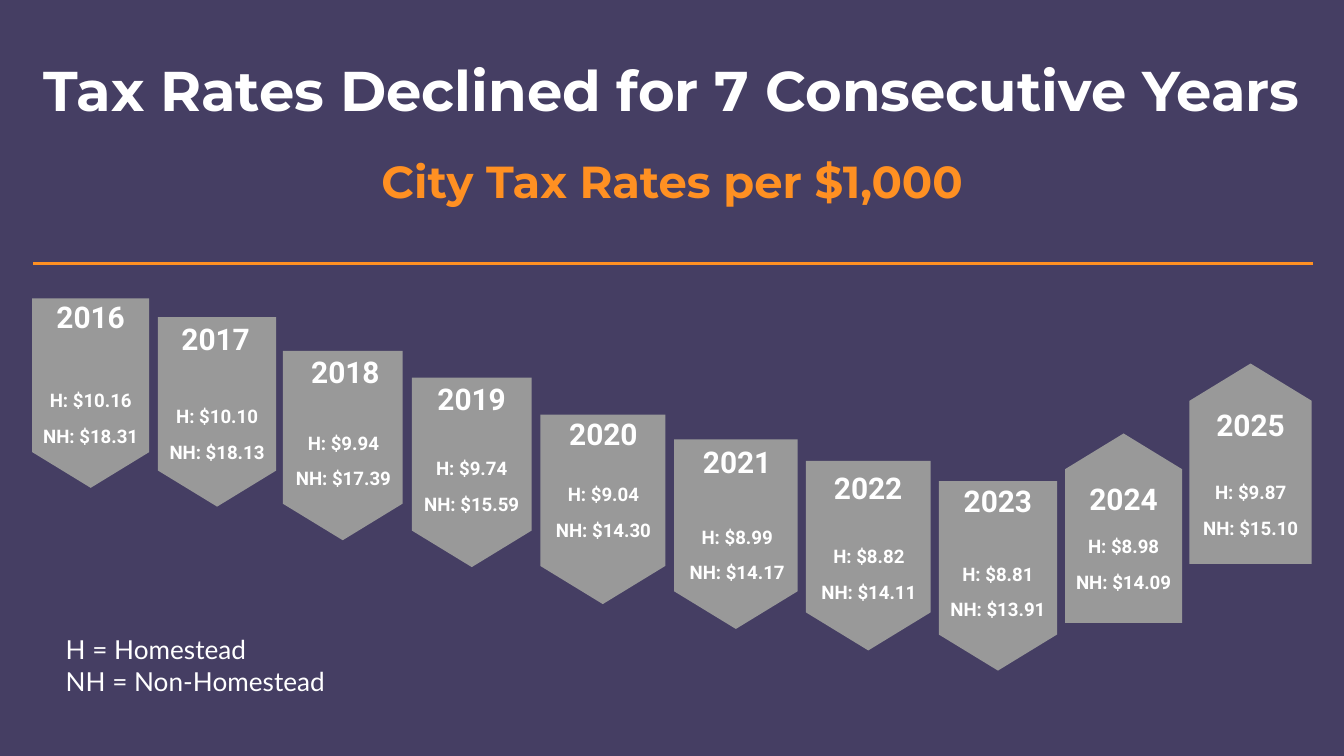
"""Build a slide of city tax rates by year."""
from dataclasses import dataclass

from lxml import etree
from pptx import Presentation
from pptx.dml.color import RGBColor
from pptx.enum.shapes import MSO_CONNECTOR, MSO_SHAPE
from pptx.enum.text import MSO_ANCHOR, MSO_AUTO_SIZE, PP_ALIGN
from pptx.oxml.ns import qn
from pptx.util import Emu, Pt

PLATE = MSO_SHAPE.PENTAGON
STRAIGHT = MSO_CONNECTOR.STRAIGHT
TOP, MIDDLE, BOTTOM = MSO_ANCHOR.TOP, MSO_ANCHOR.MIDDLE, MSO_ANCHOR.BOTTOM
LEFT, CENTER = PP_ALIGN.LEFT, PP_ALIGN.CENTER
FIXED = MSO_AUTO_SIZE.NONE
SCALE = 4572
DOWN, UP = 90, 270
TITLE_ONLY = 5


@dataclass(frozen=True)
class Theme:
    back: str = "453E63"
    plate: str = "999999"
    accent: str = "FF9022"
    ink: str = "FFFFFF"
    head: str = "Montserrat"
    body: str = "Lato"
    label: str = "Roboto"
    title_size: int = 30
    sub_size: int = 24
    year_size: int = 16
    key_size: int = 14
    rate_size: int = 10


THEME = Theme()

# year, rates, plate box, turn, year (left, top, width), rates (left, top, width)
BADGES = [
    ("2016", "10.16", "18.31", (-6, 498, 282, 174), DOWN, (39, 438, 192), (45, 571, 180)),
    ("2017", "10.10", "18.13", (182, 525, 282, 176), DOWN, (234, 471, 174), (233, 595, 180)),
    ("2018", "9.94", "17.39", (369, 574, 282, 178), DOWN, (418, 520, 192), (421, 634, 180)),
    ("2019", "9.74", "15.59", (561, 614, 282, 178), DOWN, (612, 560, 180), (612, 672, 180)),
    ("2020", "9.04", "14.30", (756, 665, 282, 186), DOWN, (802, 613, 192), (808, 711, 180)),
    ("2021", "8.99", "14.17", (954, 703, 282, 184), DOWN, (1004, 654, 186), (1004, 774, 186)),
    ("2022", "8.82", "14.11", (1151, 734, 282, 186), DOWN, (1196, 693, 192), (1203, 803, 180)),
    ("2023", "8.81", "13.91", (1344, 769, 282, 176), DOWN, (1398, 712, 174), (1398, 829, 174)),
    ("2024", "8.98", "14.09", (1531, 699, 282, 174), UP, (1585, 709, 174), (1585, 788, 174)),
    ("2025", "9.87", "15.10", (1712, 599, 298, 182), UP, (1774, 599, 174), (1770, 708, 182)),
]


def px(*values):
    return [Emu(value * SCALE) for value in values]


def color(code):
    return RGBColor.from_string(code)


def write(para, text, font, size, ink=THEME.ink, bold=True, align=CENTER,
          space=1.0, before=0, after=0):
    """Put one formatted run of text in a paragraph."""
    para.alignment = align
    para.line_spacing = space
    para.space_before, para.space_after = Pt(before), Pt(after)
    run = para.add_run()
    run.text = text
    run.font.name, run.font.size, run.font.bold = font, Pt(size), bold
    run.font.color.rgb = color(ink)


class Sheet:
    """Hold the theme and the current slide."""

    def __init__(self, deck, theme):
        self.theme = theme
        self.slide = deck.slides.add_slide(deck.slide_layouts[TITLE_ONLY])
        fill = self.slide.background.fill
        fill.solid()
        fill.fore_color.rgb = color(theme.back)

    def frame(self, shape, lines, anchor, pad=(14, 8)):
        frame = shape.text_frame
        frame.word_wrap, frame.auto_size = True, FIXED
        frame.vertical_anchor = anchor
        wide, high = px(*pad)
        frame.margin_left = frame.margin_right = wide
        frame.margin_top = frame.margin_bottom = high
        for index, (text, style) in enumerate(lines):
            para = frame.add_paragraph() if index else frame.paragraphs[0]
            write(para, text, **style)

    def title(self, box, lines):
        shape = self.slide.shapes.title
        shape.left, shape.top, shape.width, shape.height = px(*box)
        self.frame(shape, lines, BOTTOM)

    def text(self, box, lines, anchor=TOP, pad=(14, 8), home=None):
        home = home or self.slide.shapes
        self.frame(home.add_textbox(*px(*box)), lines, anchor, pad)

    def plate(self, box, turn, home):
        shape = home.add_shape(PLATE, *px(*box))
        shape.adjustments[0] = 0.305
        shape.rotation = turn
        shape.shadow.inherit = False
        shape.fill.solid()
        shape.fill.fore_color.rgb = color(self.theme.plate)
        shape.line.fill.background()

    def badge(self, year, own, other, box, turn, head, rates):
        theme = self.theme
        home = self.slide.shapes.add_group_shape().shapes
        self.plate(box, turn, home)
        big = dict(font=theme.label, size=theme.year_size)
        small = dict(font=theme.label, size=theme.rate_size)
        self.text((*head, 66), [(year, big)], MIDDLE, home=home)
        self.text((*rates, 106), [(f"H: ${own}", small),
                                  (f"NH: ${other}", dict(small, before=7))], home=home)

    def rule(self, ends, width):
        line = self.slide.shapes.add_connector(STRAIGHT, *px(*ends))
        line.line.color.rgb = color(self.theme.accent)
        line.line.width = Pt(width)
        etree.SubElement(line._element.spPr, qn("a:effectLst"))


def main():
    deck = Presentation()
    deck.slide_width, deck.slide_height = px(2000, 1125)
    sheet = Sheet(deck, THEME)
    sheet.title((0, 117, 2000, 200), [
        ("Tax Rates Declined for 7 Consecutive Years",
         dict(font=THEME.head, size=THEME.title_size, space=0.9)),
        ("City Tax Rates per $1,000",
         dict(font=THEME.head, size=THEME.sub_size, ink=THEME.accent,
              space=1.15, before=12, after=12)),
    ])
    plain = dict(font=THEME.body, size=THEME.key_size, bold=False, align=LEFT)
    sheet.text((78, 923, 462, 146),
               [("H = Homestead", plain), ("NH = Non-Homestead", plain)], pad=(20, 20))
    for badge in BADGES:
        sheet.badge(*badge)
    sheet.rule((49, 392, 1954, 392), 1.5)
    deck.save("out.pptx")


if __name__ == "__main__":
    main()
